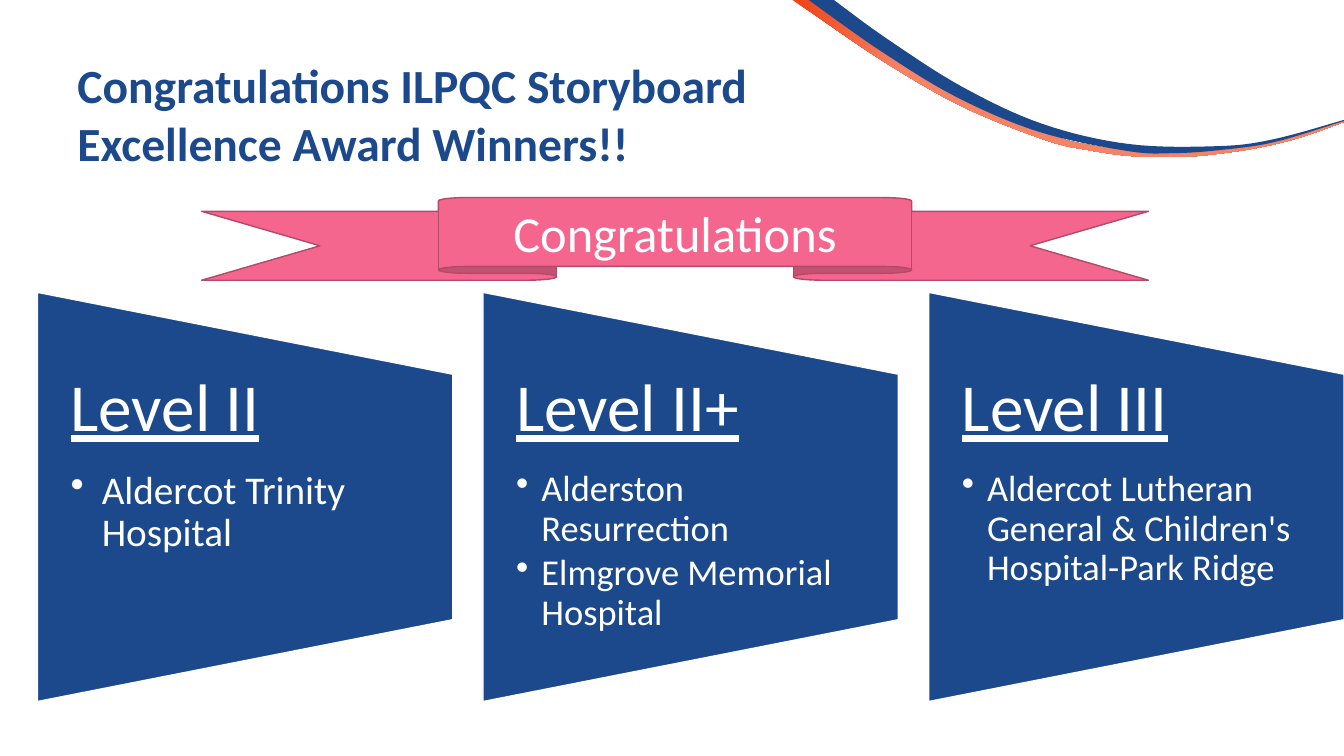
import pptx
import pptx.dml.color
import pptx.enum.shapes
import pptx.enum.text
import pptx.oxml
import pptx.oxml.ns
import pptx.util
from pptx.util import Inches

COLORS = {"blue": "1C498B", "pink": "F5668F", "rose": "B24A68", "white": "FFFFFF",
          "orange": "F04115", "salmon": "F58366"}

ORANGE_TOP = [(8.05, 0), (8.82, 0.54), (9.58, 0.99), (10.39, 1.33), (10.81, 1.44),
              (11.25, 1.5), (11.68, 1.52), (12.12, 1.49), (12.56, 1.43),
              (12.93, 1.33), (13.33, 1.2)]
ORANGE_BOTTOM = [(7.86, 0), (8.04, 0.12), (8.78, 0.62), (9.55, 1.06), (10.37, 1.39),
                 (10.8, 1.49), (11.24, 1.55), (11.69, 1.56), (12.13, 1.52),
                 (12.56, 1.45), (12.94, 1.35), (13.33, 1.21)]
BLUE_TOP = [(8.27, 0), (8.79, 0.38), (9.54, 0.86), (10.34, 1.23), (11.2, 1.43),
            (12.09, 1.45), (12.64, 1.38), (13.33, 1.19)]
BLUE_BOTTOM = [(8.02, 0), (8.71, 0.49), (9.48, 0.96), (10.31, 1.31), (11.19, 1.5),
               (11.64, 1.52), (12.09, 1.49), (12.64, 1.41), (13.33, 1.2)]

# heading, bullet size, bullet indent, winners
LEVELS = [
    ("Level II", 28, 0.31, ["Aldercot Trinity Hospital"]),
    ("Level II+", 26, 0.25, ["Alderston Resurrection", "Elmgrove Memorial Hospital"]),
    ("Level III", 26, 0.25,
     ["Aldercot Lutheran General & Children's Hospital-Park Ridge"]),
]


def rgb(name):
    return pptx.dml.color.RGBColor.from_string(COLORS[name])


def smooth(knots, steps=8):
    """Return points along a Catmull-Rom curve through the knots."""
    padded = [knots[0], *knots, knots[-1]]
    points = [knots[0]]
    for a, b, c, d in zip(padded, padded[1:], padded[2:], padded[3:]):
        for t in (i / steps for i in range(1, steps + 1)):
            points.append(tuple(
                (2 * q + (r - p) * t + (2 * p - 5 * q + 4 * r - s) * t ** 2
                 + (3 * q - p - 3 * r + s) * t ** 3) / 2
                for p, q, r, s in zip(a, b, c, d)))
    return points


class Deck:
    def __init__(self, slide, font="Calibri"):
        self.s = slide
        self.font = font

    def band(self, top, bottom):
        """Draw the closed area between two smoothed edges."""
        points = [(Inches(x), Inches(y)) for x, y in smooth(top) + smooth(bottom)[::-1]]
        builder = self.s.shapes.build_freeform(*points[0], scale=1.0)
        builder.add_line_segments(points[1:], close=True)
        sp = builder.convert_to_shape()
        sp.shadow.inherit = False
        sp.line.fill.background()
        return sp

    def fill(self, sp, color):
        sp.fill.solid()
        sp.fill.fore_color.rgb = rgb(color)

    def gradient(self, sp, stops):
        sp.fill.gradient()
        sp.fill.gradient_angle = 0
        for stop, (position, color) in zip(sp.fill.gradient_stops, stops):
            stop.position = position
            stop.color.rgb = rgb(color)

    def shape(self, kind, box, fill, line):
        sp = self.s.shapes.add_shape(kind, *map(Inches, box))
        sp.shadow.inherit = False
        self.fill(sp, fill)
        sp.line.color.rgb = rgb(line)
        sp.line.width = pptx.util.Pt(1)
        return sp

    def text_box(self, box, side_inset=0.1, inset=0.05):
        tf = self.s.shapes.add_textbox(*map(Inches, box)).text_frame
        tf.word_wrap = True
        tf.margin_left = tf.margin_right = Inches(side_inset)
        tf.margin_top = tf.margin_bottom = Inches(inset)
        return tf

    def set_text(self, p, text, size, color="white", bold=False, underline=False):
        p.text = text
        for r in p.runs:
            r.font.name = self.font
            r.font.size = pptx.util.Pt(size)
            r.font.color.rgb = rgb(color)
            r.font.bold = bold
            r.font.underline = underline

    def bullet(self, p, indent):
        p.level = 1
        pPr = p._p.get_or_add_pPr()
        pPr.set("marL", str(Inches(indent)))
        pPr.set("indent", str(-Inches(indent)))
        pPr.append(pptx.oxml.parse_xml(
            f'<a:buChar {pptx.oxml.ns.nsdecls("a")} char="•"/>'))

    def level_panel(self, left, heading, size, indent, winners):
        width, height = 4.12, 4.06
        sp = self.shape(pptx.enum.shapes.MSO_SHAPE.FLOWCHART_MANUAL_OPERATION,
                        (left + (width - height) / 2, 2.87, height, width),
                        "blue", "white")
        sp.rotation = 270
        tf = self.text_box((left, 3.71, width, 2.43), 0.33, 0)
        p = tf.paragraphs[0]
        p.line_spacing = 0.9
        p.space_after = pptx.util.Pt(17)
        self.set_text(p, heading, 48, underline=True)
        for winner in winners:
            p = tf.add_paragraph()
            self.bullet(p, indent)
            p.line_spacing = 0.9
            p.space_after = pptx.util.Pt(4)
            self.set_text(p, winner, size)


def main():
    prs = pptx.Presentation()
    prs.slide_width, prs.slide_height = Inches(13.33), Inches(7.5)
    deck = Deck(prs.slides.add_slide(prs.slide_layouts[6]))

    deck.gradient(deck.band(ORANGE_TOP, ORANGE_BOTTOM), [(0, "orange"), (0.2, "salmon")])
    deck.fill(deck.band(BLUE_TOP, BLUE_BOTTOM), "blue")

    tf = deck.text_box((0.67, 0.4, 12, 1.45))
    tf.vertical_anchor = pptx.enum.text.MSO_ANCHOR.MIDDLE
    deck.set_text(tf.paragraphs[0],
                  "Congratulations ILPQC Storyboard\vExcellence Award Winners!!",
                  34, "blue", bold=True)

    ribbon = deck.shape(pptx.enum.shapes.MSO_SHAPE.UP_RIBBON,
                        (2, 1.96, 9.39, 0.82), "pink", "rose")
    ribbon.adjustments[0], ribbon.adjustments[1] = 0.167, 0.5
    ribbon.text_frame.vertical_anchor = pptx.enum.text.MSO_ANCHOR.MIDDLE
    p = ribbon.text_frame.paragraphs[0]
    p.alignment = pptx.enum.text.PP_ALIGN.CENTER
    deck.set_text(p, "Congratulations", 36)

    for i, level in enumerate(LEVELS):
        deck.level_panel(0.37 + 4.42 * i, *level)

    prs.save("out.pptx")


if __name__ == "__main__":
    main()
